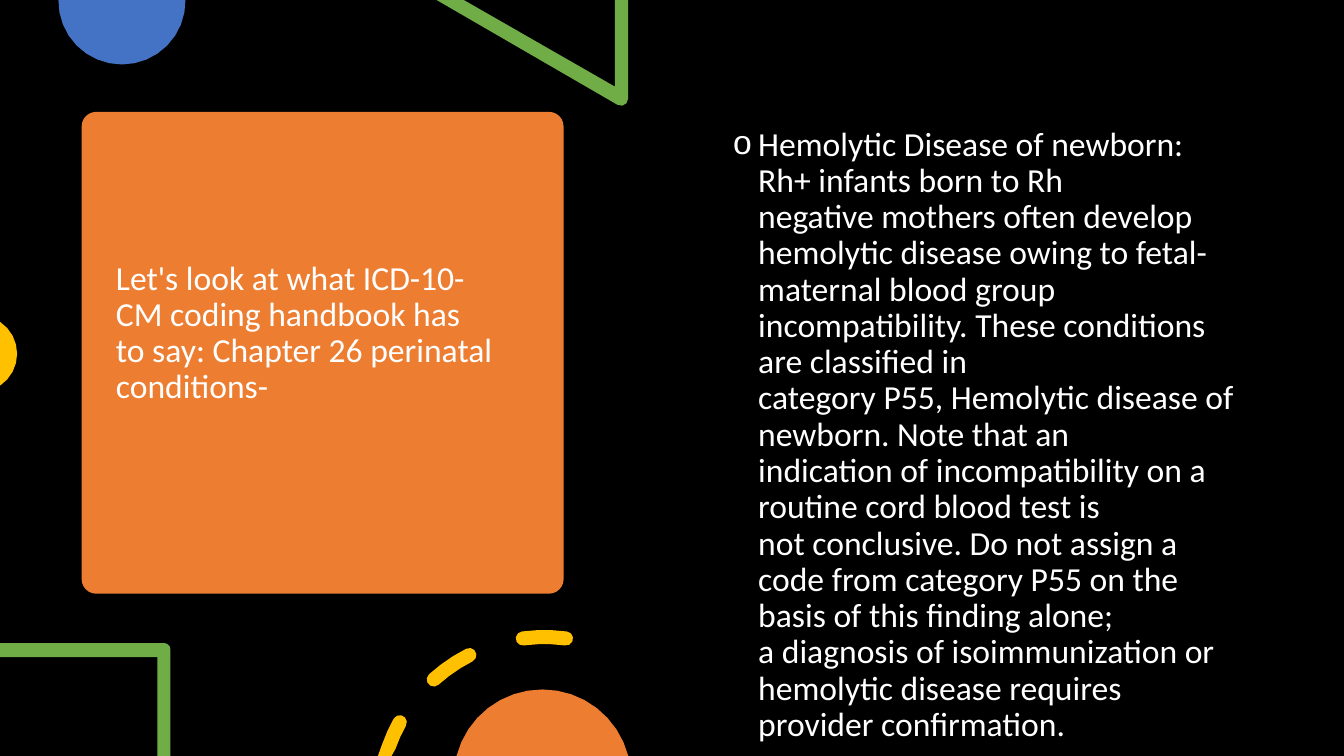
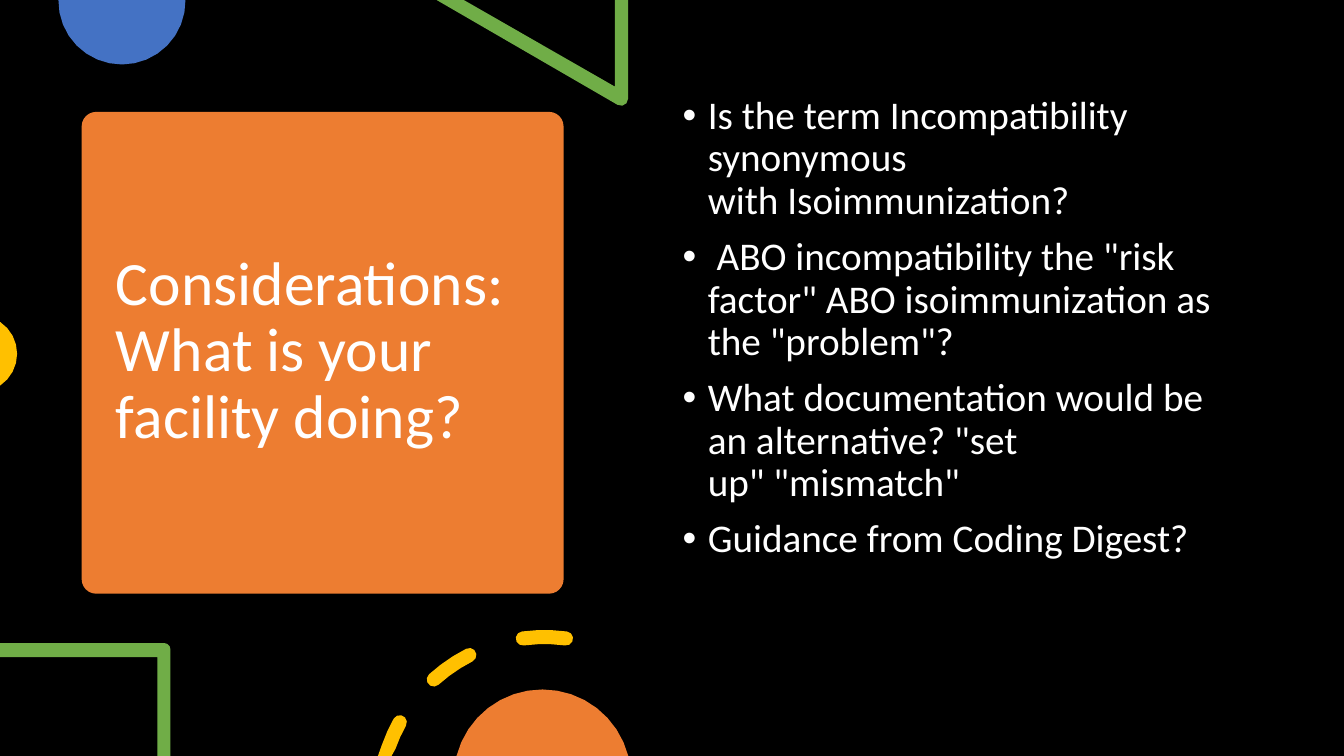
from dataclasses import dataclass
from math import cos, radians, sin

from lxml.etree import SubElement
from pptx import Presentation
from pptx.dml.color import RGBColor as RGB
from pptx.enum.shapes import MSO_SHAPE as SHAPE
from pptx.enum.text import MSO_ANCHOR as ANCHOR, MSO_AUTO_SIZE as AUTO, PP_ALIGN as ALIGN
from pptx.oxml.ns import qn
from pptx.util import Pt

PX = 9144
WIDTH, HEIGHT = 1333, 750
TIE, HARD_SPACE = "~", chr(160)


@dataclass(frozen=True)
class Theme:
    font: str = "Calibri"
    background: RGB = RGB(0, 0, 0)
    text: RGB = RGB(255, 255, 255)
    orange: RGB = RGB(0xED, 0x7D, 0x31)
    blue: RGB = RGB(0x44, 0x72, 0xC4)
    green: RGB = RGB(0x70, 0xAD, 0x47)
    yellow: RGB = RGB(0xFF, 0xC0, 0x00)
    small: int = 24
    medium: int = 28
    large: int = 44
    line_spacing: float = 0.9


THEME = Theme()


@dataclass(frozen=True)
class Content:
    title: str
    title_size: int
    title_height: int
    bullets: tuple
    body_top: int
    body_size: int
    bullet: str = "•"
    level: int = 0


CONTENTS = (
    Content(
        title="Let's~look at what~ICD-10-CM~coding handbook~has to~say:~Chapter~26~perinatal "
              "conditions-",
        title_size=THEME.small,
        title_height=420,
        bullets=(
            "Hemolytic Disease of newborn: Rh+ infants born to~Rh negative~mothers~often "
            "develop hemolytic disease owing to fetal-maternal blood~group incompatibility. "
            "These conditions are classified in category~P55,~Hemolytic~disease of newborn. "
            "Note that an indication~of~incompatibility~on a routine cord blood~test~is "
            "not~conclusive.~Do not~assign a code~from~category P55~on the basis of~this "
            "finding alone; a~diagnosis~of~isoimmunization or hemolytic disease~requires "
            "provider confirmation.",
        ),
        body_top=121,
        body_size=THEME.small,
        bullet="o",
        level=1,
    ),
    Content(
        title="Considerations: What is your facility doing?",
        title_size=THEME.large,
        title_height=456,
        bullets=(
            "Is the term Incompatibility synonymous with~Isoimmunization?",
            "~ABO incompatibility the \"risk factor\" ABO isoimmunization as the~\"problem\"?",
            "What~documentation would be an alternative? \"set up\"~\"mismatch\"",
            "Guidance from Coding Digest?",
        ),
        body_top=90,
        body_size=THEME.medium,
    ),
)


def place(sp, x, y, w, h):
    sp.left, sp.top, sp.width, sp.height = (v * PX for v in (x, y, w, h))


def paint(sp, color):
    sp.shadow.inherit = False
    sp.fill.solid()
    sp.fill.fore_color.rgb = color
    sp.line.fill.background()


def arc(cx, cy, r, start, end, steps=3):
    angles = [radians(start + (end - start) * i / steps) for i in range(steps + 1)]
    return [(cx + r * cos(a), cy + r * sin(a)) for a in angles]


def dash(cx, cy, r, half, start, end):
    caps = [arc(*arc(cx, cy, r, a, a)[0], half, a + turn, a + turn + 180, 5)
            for a, turn in ((end, 0), (start, 180))]
    return (arc(cx, cy, r + half, start, end) + caps[0][1:-1]
            + arc(cx, cy, r - half, end, start) + caps[1][1:-1])


def outline(shapes, box, color, *contours):
    x, y, w, h = box
    builder = None
    for points in contours:
        pts = [((x + min(max(px, 0), w)) * PX, (y + min(max(py, 0), h)) * PX)
               for px, py in points]
        if builder is None:
            builder = shapes.build_freeform(*pts[0])
        else:
            builder.move_to(*pts[0])
        builder.add_line_segments(pts[1:], close=True)
    paint(builder.convert_to_shape(), color)


def add_decor(shapes, box):
    h = box[3]
    triangle = [(623, 0), (610, 0), (610, 86), (460, 0), (433, 0)] + arc(616, 98, 7, 120, 0)
    square = [(0, h - 112), (0, h - 98), (156, h - 98), (156, h), (169, h)]
    square += arc(163, h - 106, 6, 0, -90)
    dashes = [dash(540, h + 46, 164, 7, start, end)
              for start, end in ((195, 209), (228, 243), (262.5, 277.5))]
    for color, *contours in (
        (THEME.blue, arc(121, 1, 63, -1, 181, 16)),
        (THEME.green, triangle),
        (THEME.yellow, arc(-21, 351, 38, -56, 56, 8)),
        (THEME.green, square),
        (THEME.yellow, *dashes),
        (THEME.orange, arc(538, h + 22, 88, 194.5, 345.5, 16)),
    ):
        outline(shapes, box, color, *contours)


def write(tf, texts, size):
    tf.auto_size = AUTO.NONE
    tf.word_wrap = True
    for i, text in enumerate(texts):
        p = tf.paragraphs[0] if i == 0 else tf.add_paragraph()
        p.text = text.replace(TIE, HARD_SPACE)
        p.alignment = ALIGN.LEFT
        p.line_spacing = THEME.line_spacing
        font = p.runs[0].font
        font.name, font.size, font.color.rgb = THEME.font, Pt(size), THEME.text


def add_title_card(slide, box, content):
    x, y, w, h = box
    card = slide.shapes.add_shape(SHAPE.ROUNDED_RECTANGLE, x * PX, y * PX, w * PX, h * PX)
    card.adjustments[0] = 0.03
    paint(card, THEME.orange)
    title = slide.shapes.title
    title._element.addprevious(card._element)
    place(title, x + 24, y + 10, w - 47, content.title_height)
    title.text_frame.vertical_anchor = ANCHOR.MIDDLE
    write(title.text_frame, [content.title], content.title_size)


def add_bullets(slide, box, content):
    body = slide.placeholders[1]
    place(body, *box)
    tf = body.text_frame
    tf.vertical_anchor = ANCHOR.TOP
    write(tf, content.bullets, content.body_size)
    for p in tf.paragraphs:
        p.level = content.level
        p.space_before = Pt(5 if content.level else 10)
        pPr = p._p.get_or_add_pPr()
        pPr.set("marL", str((25 + 50 * content.level) * PX))
        pPr.set("indent", str(-25 * PX))
        SubElement(pPr, qn("a:buChar")).set("char", content.bullet)


def add_content_slide(prs, content):
    slide = prs.slides.add_slide(prs.slide_layouts[1])
    add_title_card(slide, (81, 111, 478, 478), content)
    add_decor(slide.shapes, (0, 0, 667, HEIGHT))
    add_bullets(slide, (667, content.body_top, 575, 535), content)


def main():
    prs = Presentation()
    prs.slide_width, prs.slide_height = WIDTH * PX, HEIGHT * PX
    fill = prs.slide_master.background.fill
    fill.solid()
    fill.fore_color.rgb = THEME.background
    for content in CONTENTS:
        add_content_slide(prs, content)
    prs.save("out.pptx")


if __name__ == "__main__":
    main()
